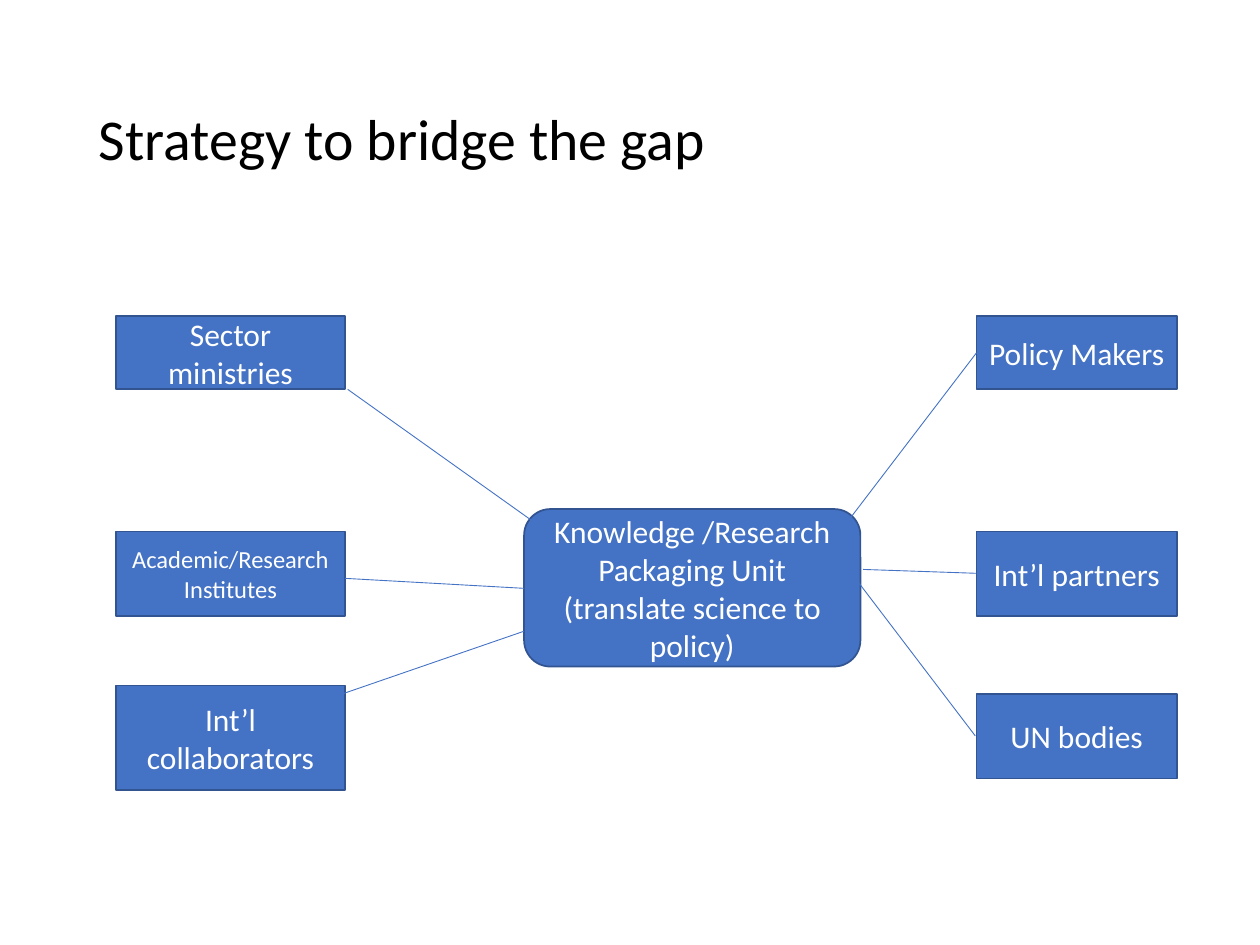
"""Build the slide on bridging the gap between science and policy."""
from lxml.etree import SubElement
from pptx import Presentation
from pptx.dml.color import RGBColor
from pptx.enum.shapes import MSO_CONNECTOR, MSO_SHAPE
from pptx.enum.text import MSO_ANCHOR, PP_ALIGN
from pptx.oxml.ns import qn
from pptx.util import Pt

BLUE = RGBColor(0x44, 0x72, 0xC4)
DARK_BLUE = RGBColor(0x32, 0x54, 0x91)
WHITE = RGBColor(0xFF, 0xFF, 0xFF)
BLACK = RGBColor(0x00, 0x00, 0x00)
FONT = "Calibri"

LEFT_X, LEFT_W = 66.2, 131
RIGHT_X, RIGHT_W = 558, 114.5
TOP_ROW = (180.7, 41.8)
MIDDLE_ROW = (303.8, 48.2)
HUB = (299.5, 290.9, 192.2, 90)

LEFT_BOXES = [
    ("Sector ministries", TOP_ROW, 18),
    ("Academic/Research Institutes", MIDDLE_ROW, 14),
    ("Int’l collaborators", (391.7, 59.8), 18),
]
RIGHT_BOXES = [
    ("Policy Makers", TOP_ROW, 18),
    ("Int’l partners", MIDDLE_ROW, 18),
    ("UN bodies", (396.7, 48.2), 18),
]
LINKS = [
    (198.7, 222.5, 311.8, 303.1),
    (197.2, 330.5, 299.5, 336.2),
    (190.8, 398.2, 299.5, 360.7),
    (486, 295.9, 558, 201.6),
    (493.2, 325.4, 558, 327.6),
    (491, 333.4, 557.3, 420.5),
]


def write(sp, text, size, color, align):
    tf = sp.text_frame
    tf.word_wrap = True
    tf.vertical_anchor = MSO_ANCHOR.MIDDLE
    p = tf.paragraphs[0]
    p.alignment = align
    r = p.add_run()
    r.text = text
    r.font.name = FONT
    r.font.size = Pt(size)
    r.font.color.rgb = color
    return p


def add_title(s, text):
    sp = s.shapes.add_textbox(Pt(49.5), Pt(28.8), Pt(621), Pt(104.4))
    write(sp, text, 33, BLACK, PP_ALIGN.LEFT).line_spacing = 0.9


def add_box(s, text, bounds, size=18, kind=MSO_SHAPE.RECTANGLE):
    sp = s.shapes.add_shape(kind, *map(Pt, bounds))
    sp.shadow.inherit = False
    sp.fill.solid()
    sp.fill.fore_color.rgb = BLUE
    sp.line.color.rgb = DARK_BLUE
    sp.line.width = Pt(1)
    write(sp, text, size, WHITE, PP_ALIGN.CENTER)


def add_column(s, boxes, x, width):
    for text, (y, height), size in boxes:
        add_box(s, text, (x, y, width, height), size)


def add_link(s, ends):
    line = s.shapes.add_connector(MSO_CONNECTOR.STRAIGHT, *map(Pt, ends))
    line.line.color.rgb = BLUE
    line.line.width = Pt(0.5)
    SubElement(line._element.spPr, qn("a:effectLst"))


def main():
    prs = Presentation()
    prs.slide_width, prs.slide_height = Pt(720), Pt(540)
    s = prs.slides.add_slide(prs.slide_layouts[6])
    add_title(s, "Strategy to bridge the gap")
    add_column(s, LEFT_BOXES, LEFT_X, LEFT_W)
    add_box(s, "Knowledge /Research Packaging Unit (translate science to policy)",
            HUB, kind=MSO_SHAPE.ROUNDED_RECTANGLE)
    add_column(s, RIGHT_BOXES, RIGHT_X, RIGHT_W)
    for ends in LINKS:
        add_link(s, ends)
    prs.save("out.pptx")


if __name__ == "__main__":
    main()
